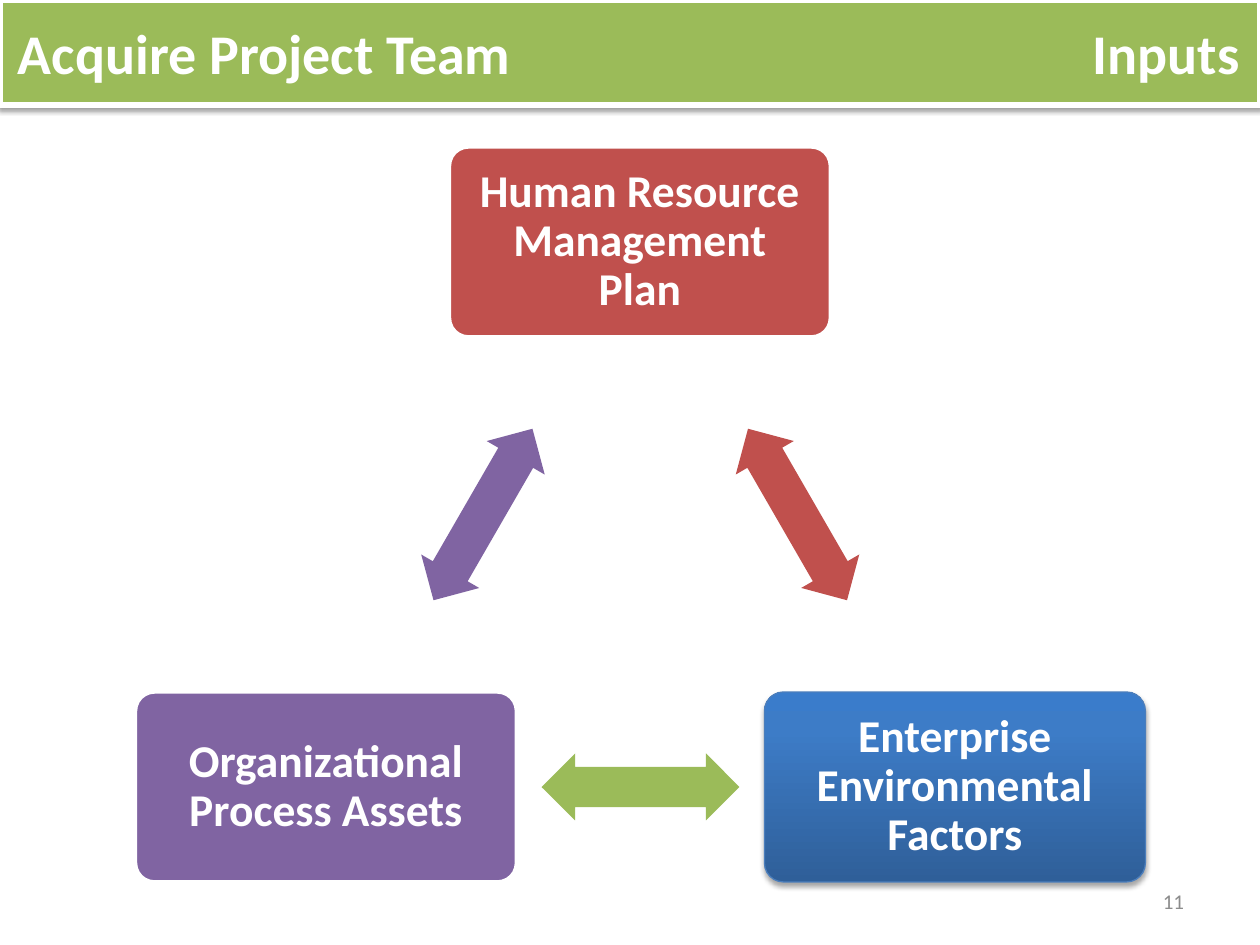
from lxml.etree import SubElement
from pptx import Presentation
from pptx.dml.color import RGBColor
from pptx.enum.shapes import MSO_SHAPE as Shape
from pptx.enum.text import MSO_ANCHOR as Anchor, PP_ALIGN as Align
from pptx.oxml import parse_xml
from pptx.oxml.ns import nsdecls, qn
from pptx.util import Pt

PX = 914400 / 126  # EMU in one px
WHITE, GREEN, RED, PURPLE = "FFFFFF", "9BBB59", "C0504D", "8064A2"
BLUE_STOPS = [(0, "2F5F99"), (80, "3D7CC7"), (100, "3A7CCB")]


def px(length):
    return round(length * PX)


def rgb(color):
    return RGBColor.from_string(color)


class Deck:
    font = "Calibri"

    def __init__(self, width, height):
        self.prs = Presentation()
        self.prs.slide_width, self.prs.slide_height = px(width), px(height)
        self.slide = self.prs.slides.add_slide(self.prs.slide_layouts[6])

    def shape(self, kind, left, top, width, height, fill, line=None, line_pt=0):
        shape = self.slide.shapes.add_shape(kind, px(left), px(top), px(width), px(height))
        shape.shadow.inherit = False
        shape.fill.solid()
        shape.fill.fore_color.rgb = rgb(fill)
        if line:
            shape.line.color.rgb = rgb(line)
            shape.line.width = Pt(line_pt)
        else:
            shape.line.fill.background()
        return shape

    def label(self, shape, text, size, color=WHITE, bold=True, align=Align.CENTER,
              margins=(13, 6, 13, 6), spacing=1.0):
        frame = shape.text_frame
        frame.word_wrap = True
        frame.vertical_anchor = Anchor.MIDDLE
        (frame.margin_left, frame.margin_top,
         frame.margin_right, frame.margin_bottom) = map(px, margins)
        paragraph = frame.paragraphs[0]
        paragraph.text = text
        paragraph.alignment = align
        paragraph.line_spacing = spacing
        font = paragraph.font
        font.name, font.size, font.bold = self.font, Pt(size), bold
        font.color.rgb = rgb(color)
        return paragraph

    def text(self, left, top, width, height, text, size, **style):
        box = self.slide.shapes.add_textbox(px(left), px(top), px(width), px(height))
        return self.label(box, text, size, **style)

    def shadow(self, shape, alpha, distance):
        effects = shape._element.spPr.find(qn("a:effectLst"))
        effects.append(parse_xml(
            f'<a:outerShdw {nsdecls("a")} blurRad="{Pt(3.1)}" dist="{Pt(distance)}" '
            f'dir="5400000" rotWithShape="0"><a:srgbClr val="000000">'
            f'<a:alpha val="{alpha * 1000}"/></a:srgbClr></a:outerShdw>'))

    def gradient(self, shape, stops):
        marks = "".join(f'<a:gs pos="{at * 1000}"><a:srgbClr val="{color}"/></a:gs>'
                        for at, color in stops)
        solid = shape._element.spPr.find(qn("a:solidFill"))
        solid.getparent().replace(solid, parse_xml(
            f'<a:gradFill {nsdecls("a")} rotWithShape="1"><a:gsLst>{marks}</a:gsLst>'
            f'<a:lin ang="16200000" scaled="0"/></a:gradFill>'))

    def right_tab(self, paragraph, position):
        # The tab list must come before the default run properties
        properties = paragraph._p.get_or_add_pPr()
        tabs = SubElement(properties, qn("a:tabLst"))
        SubElement(tabs, qn("a:tab"), pos=str(px(position)), algn="r")
        properties.find(qn("a:defRPr")).addprevious(tabs)

    def box(self, center, text, fill, line=WHITE, line_pt=2):
        width, height = 381, 190
        x, y = center
        box = self.shape(Shape.ROUNDED_RECTANGLE, x - width / 2, y - height / 2,
                         width, height, fill, line, line_pt)
        box.adjustments[0] = 0.1
        self.label(box, text, 26, margins=(14, 14, 14, 14), spacing=0.9)
        return box

    def arrow_between(self, start, end, rotation, fill):
        width, height = 198, 67
        x, y = ((a + b) / 2 for a, b in zip(start, end))
        arrow = self.shape(Shape.LEFT_RIGHT_ARROW, x - width / 2, y - height / 2,
                           width, height, fill)
        arrow.adjustments[0], arrow.adjustments[1] = 0.6, 0.5
        arrow.rotation = rotation


def main():
    deck = Deck(1260, 945)

    # Title bar, with the section set at a right tab
    title_bar = deck.shape(Shape.RECTANGLE, 0, 0, 1260, 105, GREEN, WHITE, 3)
    deck.shadow(title_bar, 38, 1.6)
    title = deck.label(title_bar, "Acquire Project Team\tInputs", 32,
                       align=Align.LEFT, margins=(18, 6, 13, 6))
    deck.right_tab(title, 1222)

    # Cycle of three inputs
    plan, factors, assets = (640, 242), (955, 787), (326, 787)
    deck.box(plan, "Human Resource Management Plan", RED)
    factors_box = deck.box(factors, "Enterprise Environmental Factors",
                           BLUE_STOPS[0][1], "4B7EBC", 0.75)
    deck.gradient(factors_box, BLUE_STOPS)
    deck.shadow(factors_box, 35, 1.8)
    deck.box(assets, "Organizational Process Assets", PURPLE)

    # Arrows halfway between neighbours
    deck.arrow_between(plan, factors, 60, RED)
    deck.arrow_between(factors, assets, 180, GREEN)
    deck.arrow_between(assets, plan, 300, PURPLE)

    # Slide number
    deck.text(903, 876, 294, 50, "11", 12, color="8C8C8C", bold=False, align=Align.RIGHT)

    deck.prs.save("out.pptx")


if __name__ == "__main__":
    main()
